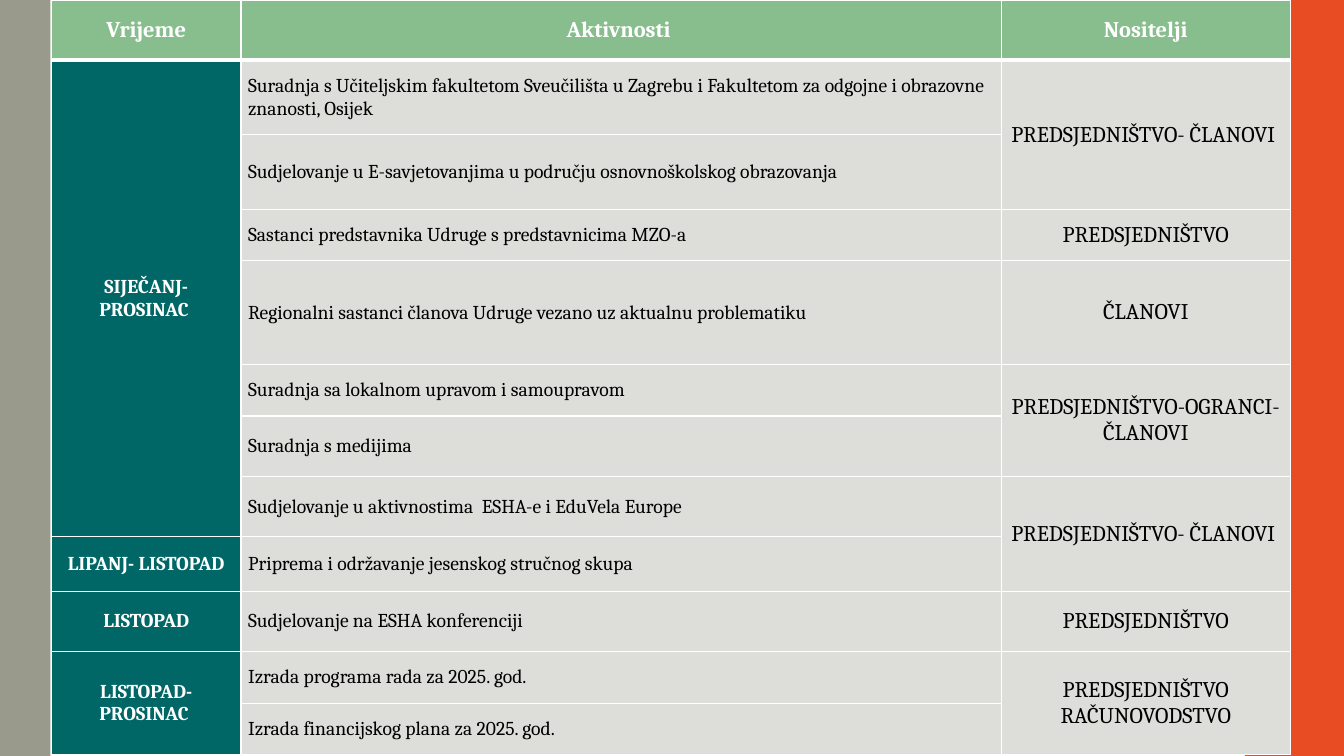
from pptx import Presentation
from pptx.dml.color import RGBColor
from pptx.enum import shapes, text
from pptx.oxml import parse_xml
from pptx.oxml.ns import nsdecls
from pptx.util import Pt

WHITE, BLACK = "FFFFFF", "000000"
GREEN, TEAL, GREY = "88BE8E", "006666", "DDDDD9"
SIDE_BARS = [(889.2, 70.8, "E84C22"), (0, 36, "9A9A8C")]
TABLE_LEFT = 36.7
COLUMN_WIDTHS = [135.5, 543, 206.5]
ROW_HEIGHTS = [43, 53.3, 53.3, 36.7, 74.2, 36.7, 43.2, 43.2, 38.9, 43.2, 36.7, 36.7]
ROWS = [
    ("Vrijeme", "Aktivnosti ", "Nositelji"),
    ("SIJEČANJ- PROSINAC ",
     "Suradnja s Učiteljskim fakultetom Sveučilišta u Zagrebu i Fakultetom za odgojne "
     "i obrazovne znanosti, Osijek", "PREDSJEDNIŠTVO- ČLANOVI "),
    (None, "Sudjelovanje u E-savjetovanjima u području osnovnoškolskog obrazovanja", None),
    (None, "Sastanci predstavnika Udruge s predstavnicima MZO-a", "PREDSJEDNIŠTVO"),
    (None, "Regionalni sastanci članova Udruge vezano uz aktualnu problematiku", "ČLANOVI"),
    (None, "Suradnja sa lokalnom upravom i samoupravom", "PREDSJEDNIŠTVO-OGRANCI- ČLANOVI"),
    (None, "Suradnja s medijima", None),
    (None, "Sudjelovanje u aktivnostima  ESHA-e i EduVela Europe", "PREDSJEDNIŠTVO- ČLANOVI "),
    ("LIPANJ- LISTOPAD", "Priprema i održavanje jesenskog stručnog skupa", None),
    ("LISTOPAD", "Sudjelovanje na ESHA konferenciji", "PREDSJEDNIŠTVO"),
    ("LISTOPAD- PROSINAC ", "Izrada programa rada za 2025. god.",
     "PREDSJEDNIŠTVO\nRAČUNOVODSTVO"),
    (None, "Izrada financijskog plana za 2025. god.", None),
]
HEADER_STYLE = (GREEN, WHITE, 16, True, text.PP_ALIGN.CENTER)
COLUMN_STYLES = [
    (TEAL, WHITE, 14, True, text.PP_ALIGN.CENTER),
    (GREY, BLACK, 14, False, text.PP_ALIGN.LEFT),
    (GREY, BLACK, 16, False, text.PP_ALIGN.CENTER),
]


def paint(fill, color):
    fill.solid()
    fill.fore_color.rgb = RGBColor.from_string(color)


def add_borders(cell, row):
    widths = {"L": 1, "R": 1, "T": 3 if row == 1 else 1, "B": 3 if row == 0 else 1}
    properties = cell._tc.get_or_add_tcPr()
    for position, (side, width) in enumerate(widths.items()):
        properties.insert(position, parse_xml(
            f'<a:ln{side} {nsdecls("a")} w="{Pt(width)}"><a:solidFill>'
            f'<a:srgbClr val="{WHITE}"/></a:solidFill></a:ln{side}>'))


def format_cell(cell, content, style, row):
    fill, color, size, bold, alignment = style
    paint(cell.fill, fill)
    add_borders(cell, row)
    cell.vertical_anchor = text.MSO_ANCHOR.MIDDLE
    cell.margin_left = cell.margin_right = Pt(5)
    cell.margin_top = cell.margin_bottom = 0
    cell.text = content or ""
    for paragraph in cell.text_frame.paragraphs:
        paragraph.alignment = alignment
        paragraph.font.name = "Cambria"
        paragraph.font.size = Pt(size)
        paragraph.font.bold = bold
        paint(paragraph.font.fill, color)


def merge_down(table, column):
    starts = [row for row, cells in enumerate(ROWS) if cells[column] is not None]
    for start, following in zip(starts, starts[1:] + [len(ROWS)]):
        if following - start > 1:
            table.cell(start, column).merge(table.cell(following - 1, column))


def main():
    presentation = Presentation()
    presentation.slide_width, presentation.slide_height = Pt(960), Pt(540)
    slide = presentation.slides.add_slide(presentation.slide_layouts[6])

    for left, width, color in SIDE_BARS:
        bar = slide.shapes.add_shape(
            shapes.MSO_SHAPE.RECTANGLE, Pt(left), 0, Pt(width), Pt(540))
        bar.shadow.inherit = False
        bar.line.fill.background()
        paint(bar.fill, color)

    table = slide.shapes.add_table(
        len(ROWS), len(COLUMN_WIDTHS), Pt(TABLE_LEFT), 0,
        Pt(sum(COLUMN_WIDTHS)), Pt(sum(ROW_HEIGHTS))).table
    table.horz_banding = False
    for column, width in zip(table.columns, COLUMN_WIDTHS):
        column.width = Pt(width)
    for row, height in zip(table.rows, ROW_HEIGHTS):
        row.height = Pt(height)

    for row, cells in enumerate(ROWS):
        for column, content in enumerate(cells):
            style = HEADER_STYLE if row == 0 else COLUMN_STYLES[column]
            format_cell(table.cell(row, column), content, style, row)
    for column in range(len(COLUMN_WIDTHS)):
        merge_down(table, column)

    presentation.save("out.pptx")


if __name__ == "__main__":
    main()
